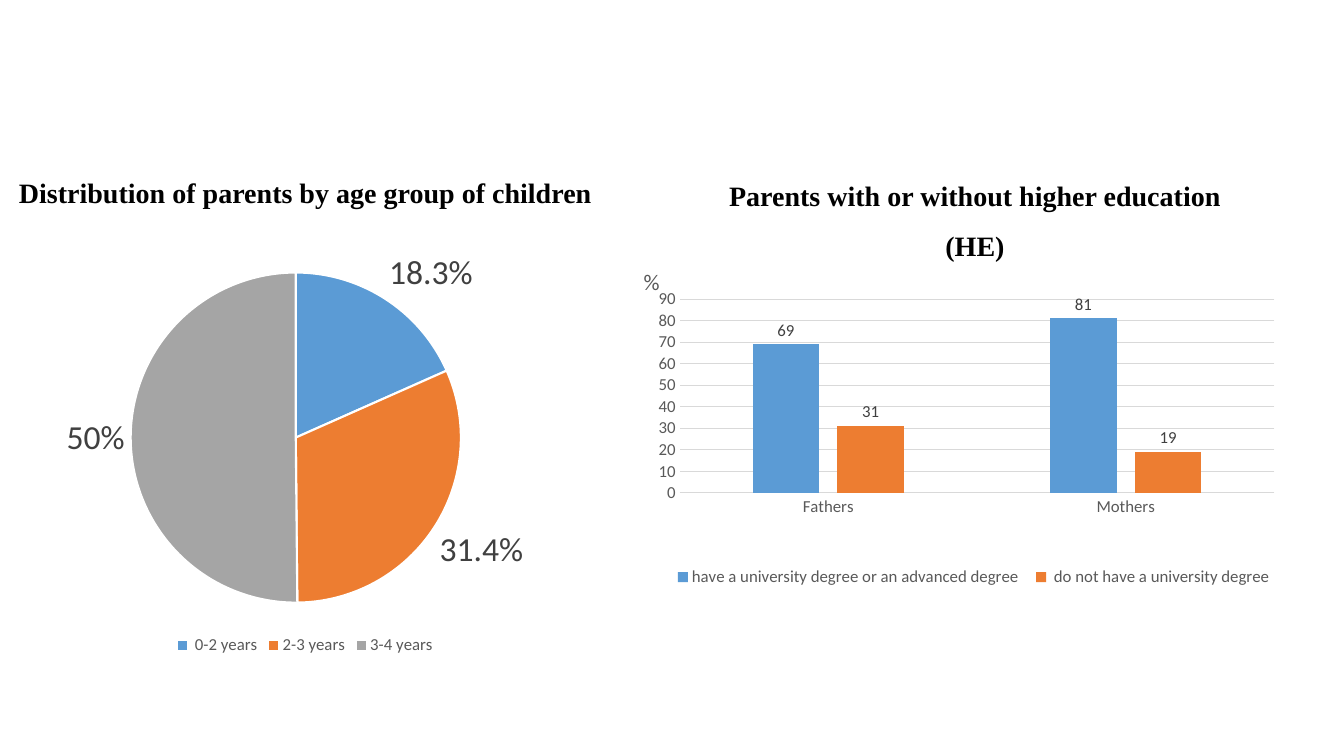
import pptx
import pptx.chart.data
import pptx.dml.color
import pptx.enum.chart
import pptx.enum.text
import pptx.oxml
import pptx.oxml.ns
import pptx.util

In, Pt = pptx.util.Inches, pptx.util.Pt
XL = pptx.enum.chart
BLUE, ORANGE, GRAY = "5B9BD5", "ED7D31", "A5A5A5"
TEXT, LABEL, GRID = "595959", "404040", "D9D9D9"


def style(font, size, color, name="Calibri", bold=False):
    font.size, font.name, font.bold = Pt(size), name, bold
    font.color.rgb = pptx.dml.color.RGBColor.from_string(color)


def place(el, index, target="", **shares):
    """Lay out a chart part by shares of the chart's size."""
    for old in el.findall(pptx.oxml.ns.qn("c:layout")):
        el.remove(old)
    modes = '<c:xMode val="edge"/><c:yMode val="edge"/>'
    sizes = "".join(f'<c:{k} val="{v}"/>' for k, v in shares.items())
    el.insert(index, pptx.oxml.parse_xml(
        f'<c:layout {pptx.oxml.ns.nsdecls("c")}><c:manualLayout>'
        f'{target}{modes}{sizes}</c:manualLayout></c:layout>'))


prs = pptx.Presentation()
prs.slide_width, prs.slide_height = In(13.33), In(7.5)
s = prs.slides.add_slide(prs.slide_layouts[6])

# Charts
pie_data = pptx.chart.data.CategoryChartData(number_format='General"%"')
pie_data.categories = [" 0-2 years", "2-3 years", "3-4 years"]
pie_data.add_series("Series 1", [18.3, 31.4, 50])

bar_data = pptx.chart.data.CategoryChartData()
bar_data.categories = ["Fathers", "Mothers"]
bar_data.add_series("have a university degree or an advanced degree", [69, 81])
bar_data.add_series(" do not have a university degree", [31, 19])

INNER = '<c:layoutTarget val="inner"/>'
charts = []
for kind, data, box, label_size, plot_box in [
    (XL.XL_CHART_TYPE.PIE, pie_data, (-1.53, 2.23, 9.11, 4.31), 24,
     dict(x=0.31, y=0.11, w=0.36, h=0.76)),
    (XL.XL_CHART_TYPE.COLUMN_CLUSTERED, bar_data, (6.21, 2.54, 6.63, 3.56), 12,
     dict(x=0.08, y=0.12, w=0.89, h=0.54)),
]:
    chart = s.shapes.add_chart(kind, *map(In, box), data).chart
    style(chart.font, 10, "000000")
    chart.has_title = False
    chart.has_legend = True
    chart.legend.position = XL.XL_LEGEND_POSITION.BOTTOM
    chart.legend.include_in_layout = False
    style(chart.legend.font, 12, TEXT)
    plot = chart.plots[0]
    plot.has_data_labels = True
    labels = plot.data_labels
    labels.show_value = True
    labels.position = XL.XL_LABEL_POSITION.OUTSIDE_END
    style(labels.font, label_size, LABEL)
    place(chart._chartSpace.chart.plotArea, 0, INNER, **plot_box)
    charts.append(chart)
pie, bars = charts

pie.plots[0].vary_by_categories = True
for i, color in enumerate([BLUE, ORANGE, GRAY]):
    fmt = pie.series[0].points[i].format
    fmt.fill.solid()
    fmt.fill.fore_color.rgb = pptx.dml.color.RGBColor.from_string(color)
    fmt.line.color.rgb = pptx.dml.color.RGBColor.from_string("FFFFFF")
    fmt.line.width = Pt(1.5)

plot = bars.plots[0]
plot.vary_by_categories = False
plot.gap_width, plot.overlap = 219, -27
for series, color in zip(bars.series, [BLUE, ORANGE]):
    series.format.fill.solid()
    series.format.fill.fore_color.rgb = pptx.dml.color.RGBColor.from_string(color)

values = bars.value_axis
values.minimum_scale, values.maximum_scale, values.major_unit = 0, 90, 10
values.has_major_gridlines = True
for axis in (bars.category_axis, values):
    axis.major_tick_mark = XL.XL_TICK_MARK.NONE
    style(axis.tick_labels.font, 12, TEXT)
for line in (bars.category_axis.format.line, values.major_gridlines.format.line):
    line.color.rgb = pptx.dml.color.RGBColor.from_string(GRID)
    line.width = Pt(0.75)
values.format.line.fill.background()

p = bars.chart_title.text_frame.paragraphs[0]
p.text = "%"
style(p.font, 16, TEXT)
bars.chart_title.include_in_layout = False
place(bars.chart_title._element, 1, x=0.02, y=0.02)
place(bars.legend._element, 1, x=0.06, y=0.85, w=0.92, h=0.09)

# Headings
for text, box in [
    ("Distribution of parents by age group of children", (-0.15, 1.53, 6.36, 0.55)),
    ("Parents with or without higher education (HE)", (7.12, 1.55, 5.1, 1.05)),
]:
    tf = s.shapes.add_textbox(*map(In, box)).text_frame
    tf.word_wrap = True
    tf.auto_size = pptx.enum.text.MSO_AUTO_SIZE.SHAPE_TO_FIT_TEXT
    p = tf.paragraphs[0]
    p.text = text
    p.alignment = pptx.enum.text.PP_ALIGN.CENTER
    p.line_spacing = 1.5
    style(p.font, 20, "000000", "Times New Roman", True)

prs.save("out.pptx")
